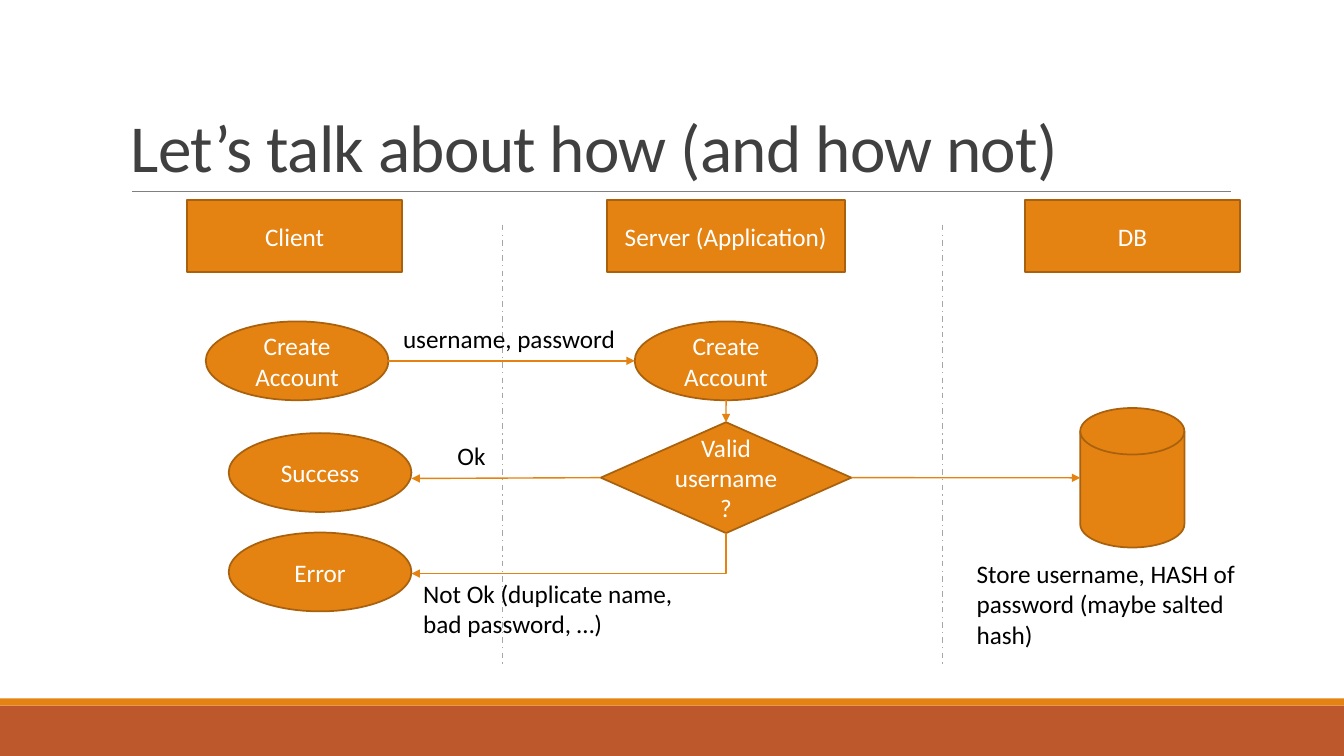
from dataclasses import dataclass

from lxml import etree
from pptx import Presentation
from pptx.dml.color import RGBColor
from pptx.enum.dml import MSO_LINE
from pptx.enum.shapes import MSO_CONNECTOR, MSO_SHAPE
from pptx.enum.text import MSO_ANCHOR, PP_ALIGN
from pptx.oxml.ns import qn
from pptx.shapes.connector import Connector
from pptx.shapes.shapetree import SlideShapes
from pptx.text.text import TextFrame
from pptx.util import Pt

RECTANGLE = MSO_SHAPE.RECTANGLE
OVAL = MSO_SHAPE.OVAL
DECISION = MSO_SHAPE.FLOWCHART_DECISION
DISK = MSO_SHAPE.FLOWCHART_MAGNETIC_DISK
STRAIGHT = MSO_CONNECTOR.STRAIGHT
DASH_DOT = MSO_LINE.DASH_DOT
LEFT, CENTER = PP_ALIGN.LEFT, PP_ALIGN.CENTER
TOP, MIDDLE, BOTTOM = MSO_ANCHOR.TOP, MSO_ANCHOR.MIDDLE, MSO_ANCHOR.BOTTOM


@dataclass(frozen=True)
class Theme:
    font: str = "Calibri"
    title_size: float = 48
    body_size: float = 18
    orange: str = "E48312"
    outline: str = "A9610D"
    rust: str = "BD582C"
    title: str = "404040"
    rule: str = "808080"
    divider: str = "A6A6A6"
    on_orange: str = "FFFFFF"
    label: str = "000000"


THEME = Theme()


@dataclass(frozen=True)
class Node:
    kind: MSO_SHAPE
    left: float
    top: float
    width: float
    height: float
    text: str = ""

    @property
    def right(self) -> float:
        return self.left + self.width

    @property
    def bottom(self) -> float:
        return self.top + self.height

    @property
    def center_x(self) -> float:
        return self.left + self.width / 2

    @property
    def center_y(self) -> float:
        return self.top + self.height / 2


@dataclass(frozen=True)
class Label:
    left: float
    top: float
    width: float
    height: float
    text: str


def header(left: float, width: float, text: str) -> Node:
    return Node(RECTANGLE, left, 142.6, width, 51.8, text)


def step(left: float, top: float, text: str) -> Node:
    return Node(OVAL, left, top, 130.5, 56.3, text)


HEADERS = [header(133.6, 153.7, "Client"),
           header(433.4, 170, "Server (Application)"),
           header(732.2, 153.7, "DB")]
CLIENT_CREATE = step(147, 229.6, "Create Account")
SERVER_CREATE = step(453.4, 229.6, "Create Account")
SUCCESS = step(163.4, 309.4, "Success")
ERROR = step(163.4, 380.4, "Error")
VALID = Node(DECISION, 429.1, 301.6, 179, 79.2, "Valid username?")
DATABASE = Node(DISK, 771.6, 291.5, 74.4, 99.6)
NODES = [*HEADERS, CLIENT_CREATE, SERVER_CREATE, SUCCESS, ERROR, VALID, DATABASE]

LABELS = [
    Label(295.2, 409.7, 193.7, 51, "Not Ok (duplicate name, bad password, …)"),
    Label(280.8, 227.5, 170, 29, "username, password"),
    Label(319.7, 311, 35.3, 29, "Ok"),
    Label(690.5, 395.3, 212.4, 73, "Store username, HASH of password (maybe salted hash)"),
]
DIVIDERS_X = [359.1, 673.1]


def write(frame: TextFrame, text: str, color: str, align: PP_ALIGN,
          anchor: MSO_ANCHOR, size: float = THEME.body_size) -> None:
    frame.word_wrap = True
    frame.vertical_anchor = anchor
    paragraph = frame.paragraphs[0]
    paragraph.text = text
    paragraph.alignment = align
    paragraph.font.name = THEME.font
    paragraph.font.size = Pt(size)
    paragraph.font.color.rgb = RGBColor.from_string(color)


def add_band(shapes: SlideShapes, top: float, height: float, color: str) -> None:
    band = shapes.add_shape(RECTANGLE, 0, Pt(top), Pt(960), Pt(height))
    band.shadow.inherit = False
    band.fill.solid()
    band.fill.fore_color.rgb = RGBColor.from_string(color)
    band.line.fill.background()


def add_title(shapes: SlideShapes, text: str) -> None:
    title = shapes.add_textbox(Pt(86.4), Pt(22.3), Pt(792), Pt(114.5))
    write(title.text_frame, text, THEME.title, LEFT, BOTTOM, THEME.title_size)
    paragraph = title.text_frame.paragraphs[0]
    paragraph.line_spacing = 0.85
    paragraph.runs[0].font._element.set("spc", "-50")


def add_node(shapes: SlideShapes, node: Node) -> None:
    shape = shapes.add_shape(node.kind, Pt(node.left), Pt(node.top),
                             Pt(node.width), Pt(node.height))
    shape.shadow.inherit = False
    shape.fill.solid()
    shape.fill.fore_color.rgb = RGBColor.from_string(THEME.orange)
    shape.line.color.rgb = RGBColor.from_string(THEME.outline)
    shape.line.width = Pt(1.25)
    if node.text:
        write(shape.text_frame, node.text, THEME.on_orange, CENTER, MIDDLE)


def add_label(shapes: SlideShapes, label: Label) -> None:
    box = shapes.add_textbox(Pt(label.left), Pt(label.top),
                             Pt(label.width), Pt(label.height))
    write(box.text_frame, label.text, THEME.label, LEFT, TOP)


def add_line(shapes: SlideShapes, x1: float, y1: float, x2: float, y2: float,
             color: str, width: float = 1) -> Connector:
    line = shapes.add_connector(STRAIGHT, Pt(x1), Pt(y1), Pt(x2), Pt(y2))
    line.line.color.rgb = RGBColor.from_string(color)
    line.line.width = Pt(width)
    etree.SubElement(line._element.spPr, qn("a:effectLst"))
    return line


def add_arrow(shapes: SlideShapes, x1: float, y1: float,
              x2: float, y2: float) -> Connector:
    arrow = add_line(shapes, x1, y1, x2, y2, THEME.orange)
    etree.SubElement(arrow.line._get_or_add_ln(), qn("a:tailEnd"), type="triangle")
    return arrow


def add_down_left_arrow(shapes: SlideShapes, x1: float, y1: float,
                        x2: float, y2: float) -> None:
    """Draw an elbow that drops from the start, then runs left to the end.

    The preset elbow goes right then down, so its frame is turned a quarter.
    """
    drop, run = y2 - y1, x1 - x2
    left = (x1 + x2 - drop) / 2
    top = (y1 + y2 - run) / 2
    arrow = add_arrow(shapes, left, top, left + drop, top + run)
    properties = arrow._element.spPr
    properties.find(qn("a:xfrm")).set("rot", "5400000")
    properties.find(qn("a:prstGeom")).set("prst", "bentConnector2")


def main() -> None:
    presentation = Presentation()
    presentation.slide_width, presentation.slide_height = Pt(960), Pt(540)
    shapes = presentation.slides.add_slide(presentation.slide_layouts[6]).shapes

    add_band(shapes, 504, 36, THEME.rust)
    add_band(shapes, 498.8, 5.2, THEME.orange)
    add_line(shapes, 94.3, 136.8, 879.1, 136.8, THEME.rule, 0.5)
    add_title(shapes, "Let’s talk about how (and how not)")
    for x in DIVIDERS_X:
        add_line(shapes, x, 160.6, x, 474.5, THEME.divider).line.dash_style = DASH_DOT

    for node in NODES:
        add_node(shapes, node)
    add_arrow(shapes, CLIENT_CREATE.right, CLIENT_CREATE.center_y,
              SERVER_CREATE.left, SERVER_CREATE.center_y)
    add_arrow(shapes, SERVER_CREATE.center_x, SERVER_CREATE.bottom,
              VALID.center_x, VALID.top)
    add_arrow(shapes, VALID.left, VALID.center_y, SUCCESS.right, 341.8)
    add_arrow(shapes, VALID.right, VALID.center_y, DATABASE.left, DATABASE.center_y)
    add_down_left_arrow(shapes, VALID.center_x, VALID.bottom, ERROR.right, 409.7)
    for label in LABELS:
        add_label(shapes, label)

    presentation.save("out.pptx")


if __name__ == "__main__":
    main()
